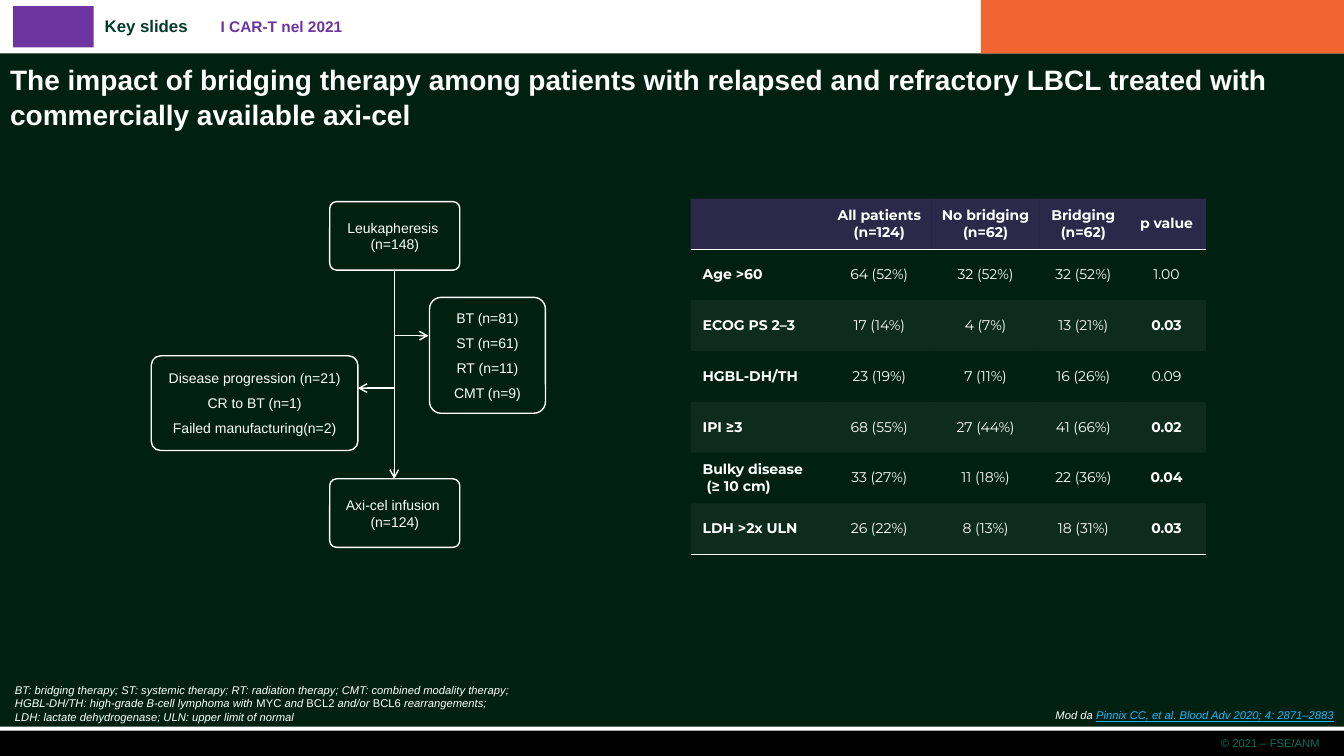
"""Build the slide on bridging therapy before axi-cel infusion."""
from dataclasses import dataclass

from lxml import etree
from pptx import Presentation
from pptx.dml.color import RGBColor
from pptx.enum.shapes import MSO_CONNECTOR, MSO_SHAPE
from pptx.enum.text import MSO_ANCHOR, MSO_AUTO_SIZE, PP_ALIGN
from pptx.oxml.ns import qn
from pptx.slide import Slide
from pptx.text.text import TextFrame
from pptx.util import Inches, Pt

LEFT, MID, RIGHT = PP_ALIGN.LEFT, PP_ALIGN.CENTER, PP_ALIGN.RIGHT
TOP, CENTER = MSO_ANCHOR.TOP, MSO_ANCHOR.MIDDLE
NO_FIT = MSO_AUTO_SIZE.NONE
RECT, ROUND = MSO_SHAPE.RECTANGLE, MSO_SHAPE.ROUNDED_RECTANGLE
STRAIGHT = MSO_CONNECTOR.STRAIGHT

WHITE = RGBColor(0xFF, 0xFF, 0xFF)
BLACK = RGBColor(0x00, 0x00, 0x00)
NIGHT = RGBColor(0x00, 0x21, 0x12)
PURPLE = RGBColor(0x6E, 0x34, 0x9F)
ORANGE = RGBColor(0xF1, 0x65, 0x30)
GREEN = RGBColor(0x00, 0x3B, 0x29)
TEAL = RGBColor(0x00, 0x73, 0x64)
BLUE = RGBColor(0x17, 0xBB, 0xFD)

NO_GRID = "{2D5ABB26-0587-4C30-8999-92F81FD0307C}"
Area = tuple[float, float, float, float]


@dataclass(frozen=True)
class Style:
    size: float
    color: RGBColor = WHITE
    bold: bool = False
    align: PP_ALIGN = LEFT
    face: str = "Arial"
    gap: float = 0


@dataclass(frozen=True)
class Band:
    area: Area
    color: RGBColor


@dataclass(frozen=True)
class Label:
    area: Area
    text: str
    style: Style


@dataclass(frozen=True)
class Step:
    area: Area
    lines: tuple[str, ...]


@dataclass(frozen=True)
class Arrow:
    start: tuple[float, float]
    end: tuple[float, float]


@dataclass(frozen=True)
class Piece:
    text: str
    slant: bool = True
    link: bool = False


@dataclass(frozen=True)
class Note:
    area: Area
    align: PP_ALIGN
    lines: tuple[tuple[Piece, ...], ...]


BANDS = (
    Band((0, 0, 13.33, 0.53), WHITE),
    Band((9.73, 0, 3.6, 0.53), ORANGE),
    Band((0, 7.23, 13.33, 0.27), BLACK),
    Band((0, 7.21, 13.33, 0.04), WHITE),
    Band((0.13, 0.06, 0.8, 0.41), PURPLE),
)
LABELS = (
    Label((0.94, 0.11, 2, 0.3), "Key slides", Style(12, GREEN, True)),
    Label((2.09, 0.12, 5.6, 0.29), "I CAR-T nel 2021", Style(11, PURPLE, True)),
    Label((0.63, 7.26, 12.56, 0.24), "© 2021 – FSE/ANM", Style(8, TEAL, align=RIGHT)),
)
TITLE = Label(
    (0, 0.55, 12.91, 0.85),
    "The impact of bridging therapy among patients with relapsed and refractory "
    "LBCL treated with commercially available axi-cel",
    Style(20, bold=True),
)
STEPS = (
    Step((1.5, 3.53, 2.05, 0.94),
         ("Disease progression (n=21)", "CR to BT (n=1)", "Failed manufacturing(n=2)")),
    Step((3.27, 2, 1.29, 0.68), ("Leukapheresis \n(n=148)",)),
    Step((3.27, 4.75, 1.29, 0.68), ("Axi-cel infusion \n(n=124)",)),
    Step((4.26, 2.95, 1.15, 1.15), ("BT (n=81)", "ST (n=61)", "RT (n=11)", "CMT (n=9)")),
)
ARROWS = (
    Arrow((3.91, 2.68), (3.91, 4.75)),
    Arrow((3.91, 3.33), (4.25, 3.33)),
    Arrow((3.91, 3.85), (3.55, 3.85)),
)
WIDTHS = (1.35, 1.04, 1.07, 0.87, 0.78)
ROWS = (
    ("", "All patients (n=124)", "No bridging\n(n=62)", "Bridging (n=62)", "p value"),
    ("Age >60", "64 (52%)", "32 (52%)", "32 (52%)", "1.00"),
    ("ECOG PS 2–3", "17 (14%)", "4 (7%)", "13 (21%)", "0.03"),
    ("HGBL-DH/TH", "23 (19%)", "7 (11%)", "16 (26%)", "0.09"),
    ("IPI ≥3", "68 (55%)", "27 (44%)", "41 (66%)", "0.02"),
    ("Bulky disease\n (≥ 10 cm)", "33 (27%)", "11 (18%)", "22 (36%)", "0.04"),
    ("LDH >2x ULN", "26 (22%)", "8 (13%)", "18 (31%)", "0.03"),
)
NOTES = (
    Note((0.05, 6.73, 7, 0.5), LEFT, (
        (Piece("BT: bridging therapy; ST: systemic therapy; RT: radiation therapy; "
               "CMT: combined modality therapy;"),),
        (Piece("HGBL-DH/TH: high-grade B-cell lymphoma with "), Piece("MYC", False),
         Piece(" and "), Piece("BCL2", False), Piece(" and/or "),
         Piece("BCL6 ", False), Piece("rearrangements;")),
        (Piece("LDH: lactate dehydrogenase; ULN: upper limit of normal"),),
    )),
    Note((7.44, 6.98, 5.89, 0.24), RIGHT, (
        (Piece("Mod da "),
         Piece("Pinnix CC, et al. Blood Adv 2020; 4: 2871–2883", link=True)),
    )),
)


def place(area: Area) -> list[int]:
    return [Inches(side) for side in area]


def write(frame: TextFrame, lines: tuple[str, ...], style: Style) -> None:
    frame.word_wrap = True
    for rank, line in enumerate(lines):
        para = frame.add_paragraph() if rank else frame.paragraphs[0]
        para.text = line
        para.alignment = style.align
        if rank:
            para.space_before = Pt(style.gap)
        font = para.font
        font.name, font.size, font.bold = style.face, Pt(style.size), style.bold
        font.color.rgb = style.color


def add_band(slide: Slide, band: Band) -> None:
    shape = slide.shapes.add_shape(RECT, *place(band.area))
    shape.shadow.inherit = False
    shape.fill.solid()
    shape.fill.fore_color.rgb = band.color
    shape.line.fill.background()


def add_label(slide: Slide, label: Label) -> None:
    box = slide.shapes.add_textbox(*place(label.area))
    write(box.text_frame, (label.text,), label.style)


def add_title(slide: Slide) -> None:
    title = slide.shapes.title
    title.left, title.top, title.width, title.height = place(TITLE.area)
    frame = title.text_frame
    write(frame, (TITLE.text,), TITLE.style)
    frame.auto_size, frame.vertical_anchor = NO_FIT, TOP
    frame.paragraphs[0].line_spacing = 1.05


def add_step(slide: Slide, step: Step) -> None:
    shape = slide.shapes.add_shape(ROUND, *place(step.area))
    shape.adjustments[0] = 0.1
    shape.shadow.inherit = False
    shape.fill.background()
    shape.line.color.rgb, shape.line.width = WHITE, Pt(1)
    shape.text_frame.vertical_anchor = CENTER
    write(shape.text_frame, step.lines, Style(10, align=MID, gap=6))


def add_arrow(slide: Slide, arrow: Arrow) -> None:
    line = slide.shapes.add_connector(STRAIGHT, *place(arrow.start + arrow.end))
    line.line.color.rgb, line.line.width = WHITE, Pt(1)
    etree.SubElement(line.line._get_or_add_ln(), qn("a:tailEnd"), type="arrow")
    etree.SubElement(line._element.spPr, qn("a:effectLst"))


def tint(cell, color: RGBColor, alpha: int) -> None:
    cell.fill.solid()
    cell.fill.fore_color.rgb = color
    tone = cell._tc.tcPr.find(".//" + qn("a:srgbClr"))
    etree.SubElement(tone, qn("a:alpha"), val=str(alpha * 1000))


def rule(cell) -> None:
    line = etree.Element(qn("a:lnB"), w=str(Pt(1)))
    fill = etree.SubElement(line, qn("a:solidFill"))
    etree.SubElement(fill, qn("a:srgbClr"), val=str(WHITE))
    cell._tc.get_or_add_tcPr().insert(0, line)


def add_grid(slide: Slide) -> None:
    area = place((6.85, 1.97, sum(WIDTHS), 3.53))
    table = slide.shapes.add_table(len(ROWS), len(WIDTHS), *area).table
    table.horz_banding = table.first_row = False
    table._tbl.tblPr.find(qn("a:tableStyleId")).text = NO_GRID
    for column, width in zip(table.columns, WIDTHS):
        column.width = Inches(width)
    for row, texts in enumerate(ROWS):
        for col, text in enumerate(texts):
            cell = table.cell(row, col)
            bold = row == 0 or col == 0 or (col == 4 and float(text) < 0.05)
            align = MID if col else LEFT
            write(cell.text_frame, (text,), Style(10, WHITE, bold, align, "Montserrat"))
            cell.vertical_anchor = CENTER
            if col == 0:
                cell.margin_left = Inches(0.12)
            if row == 0:
                tint(cell, PURPLE, 40)
            elif row % 2 == 0:
                tint(cell, WHITE, 5)
            else:
                cell.fill.background()
            if row in (0, len(ROWS) - 1):
                rule(cell)


def add_note(slide: Slide, note: Note) -> None:
    frame = slide.shapes.add_textbox(*place(note.area)).text_frame
    write(frame, ("",) * len(note.lines), Style(8, align=note.align))
    for para, line in zip(frame.paragraphs, note.lines):
        for piece in line:
            run = para.add_run()
            run.text, run.font.italic = piece.text, piece.slant
            if piece.link:
                run.font.underline, run.font.color.rgb = True, BLUE


def main() -> None:
    deck = Presentation()
    deck.slide_width, deck.slide_height = Inches(13.33), Inches(7.5)
    slide = deck.slides.add_slide(deck.slide_layouts[5])
    slide.background.fill.solid()
    slide.background.fill.fore_color.rgb = NIGHT
    for band in BANDS:
        add_band(slide, band)
    for label in LABELS:
        add_label(slide, label)
    add_title(slide)
    for step in STEPS:
        add_step(slide, step)
    for arrow in ARROWS:
        add_arrow(slide, arrow)
    add_grid(slide)
    for note in NOTES:
        add_note(slide, note)
    deck.save("out.pptx")


if __name__ == "__main__":
    main()
